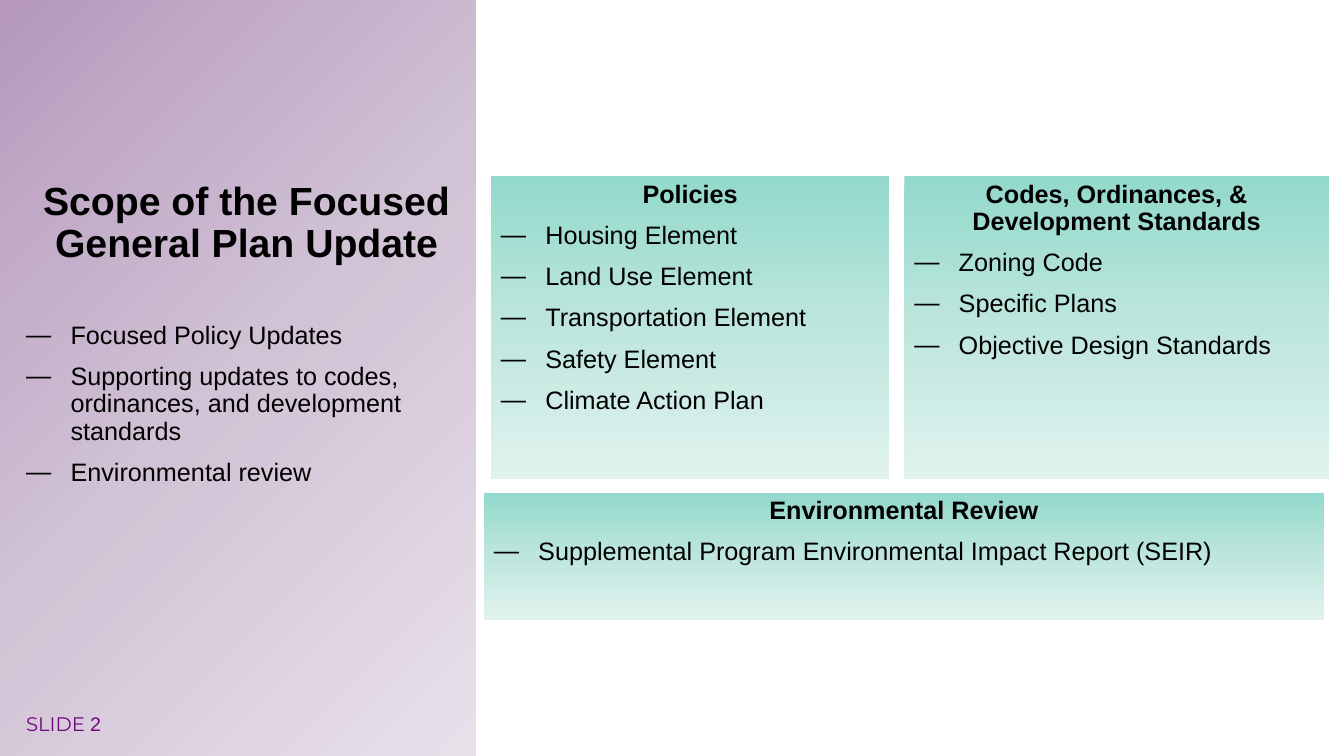
from lxml import etree
from pptx import Presentation
from pptx.dml.color import RGBColor
from pptx.enum.shapes import MSO_SHAPE
from pptx.enum.text import MSO_ANCHOR, MSO_AUTO_SIZE, PP_ALIGN
from pptx.oxml import parse_xml
from pptx.oxml.ns import nsdecls, qn
from pptx.util import Inches, Pt

PURPLE_FADE = ("B699BD", "D1C2D5", "E8E1EA")
GREEN_FADE = ("93D9CB", "BEE6DD", "E0F2EE")


def color(hex_value):
    return RGBColor.from_string(hex_value)


class ScopeSlide:
    """Holds the text style and the slide being built."""

    font = "Arial"
    ink = "000000"
    accent = "6E087A"
    text_size = 18
    indent = Inches(0.44)

    def __init__(self, deck):
        self.slide = deck.slides.add_slide(deck.slide_layouts[1])

    def place(self, shape, left, top, width, height):
        shape.left, shape.top = Inches(left), Inches(top)
        shape.width, shape.height = Inches(width), Inches(height)

    def frame(self, shape):
        frame = shape.text_frame
        frame.word_wrap = True
        frame.auto_size = MSO_AUTO_SIZE.NONE
        frame.vertical_anchor = MSO_ANCHOR.TOP
        return frame

    def run(self, paragraph, text, size=text_size, bold=False, font=font, hex_value=ink):
        run = paragraph.add_run()
        run.text = text
        run.font.name = font
        run.font.size = Pt(size)
        run.font.bold = bold
        run.font.color.rgb = color(hex_value)

    def heading(self, paragraph, text, size=text_size):
        paragraph.alignment = PP_ALIGN.CENTER
        paragraph.line_spacing = 0.9
        paragraph.space_before = Pt(0)
        self.run(paragraph, text, size, bold=True)

    def bullet(self, paragraph, text, first=False):
        properties = paragraph._p.get_or_add_pPr()
        properties.set("marL", str(self.indent))
        properties.set("indent", str(-self.indent))
        etree.SubElement(properties, qn("a:buFont")).set("typeface", self.font)
        etree.SubElement(properties, qn("a:buChar")).set("char", "—")
        paragraph.alignment = PP_ALIGN.LEFT
        paragraph.line_spacing = 0.9
        paragraph.space_before = Pt(0 if first else 10)
        self.run(paragraph, text)

    def title(self, text, *box):
        title = self.slide.shapes.title
        self.place(title, *box)
        self.heading(self.frame(title).paragraphs[0], text, 28)

    def body(self, items, *box):
        body = self.slide.placeholders[1]
        self.place(body, *box)
        frame = self.frame(body)
        for index, item in enumerate(items):
            paragraph = frame.add_paragraph() if index else frame.paragraphs[0]
            self.bullet(paragraph, item, first=index == 0)

    def panel(self, fade, angle, *box):
        panel = self.slide.shapes.add_shape(MSO_SHAPE.RECTANGLE, *map(Inches, box))
        panel.shadow.inherit = False
        panel.line.fill.background()
        stops = "".join(
            f'<a:gs pos="{index * 50000}"><a:srgbClr val="{stop}"/></a:gs>'
            for index, stop in enumerate(fade))
        panel._element.spPr.find(qn("a:prstGeom")).addnext(parse_xml(
            f'<a:gradFill {nsdecls("a")} rotWithShape="1"><a:gsLst>{stops}</a:gsLst>'
            f'<a:lin ang="{angle * 60000}" scaled="0"/></a:gradFill>'))
        return panel

    def sidebar(self, *box):
        panel = self.panel(PURPLE_FADE, 45, *box)
        # Behind the title and body placeholders
        self.slide.shapes._spTree.insert(2, panel._element)

    def card(self, heading, items, *box):
        frame = self.frame(self.panel(GREEN_FADE, 90, *box))
        self.heading(frame.paragraphs[0], heading)
        for item in items:
            self.bullet(frame.add_paragraph(), item)

    def slide_number(self, number, *box):
        label = self.slide.shapes.add_textbox(*map(Inches, box))
        paragraph = self.frame(label).paragraphs[0]
        self.run(paragraph, "SLIDE ", 14, font="Montserrat", hex_value=self.accent)
        self.run(paragraph, number, 14, hex_value=self.accent)


def main():
    deck = Presentation()
    deck.slide_width, deck.slide_height = Inches(13.33), Inches(7.5)
    scope = ScopeSlide(deck)

    # Left side: title and summary
    scope.sidebar(0, -0.01, 4.72, 7.51)
    scope.slide_number("2", 0.16, 7.01, 4.31, 0.34)
    scope.title("Scope of the Focused General Plan Update", 0.17, 1.75, 4.55, 1.4)
    scope.body(["Focused Policy Updates",
                "Supporting updates to codes, ordinances, and development standards",
                "Environmental review"], 0.16, 3.15, 4.41, 4.2)

    # Right side: the three parts of the update
    scope.card("Policies",
               ["Housing Element", "Land Use Element", "Transportation Element",
                "Safety Element", "Climate Action Plan"], 4.87, 1.75, 3.95, 3)
    scope.card("Codes, Ordinances, & Development Standards",
               ["Zoning Code", "Specific Plans", "Objective Design Standards"],
               8.97, 1.75, 4.21, 3)
    scope.card("Environmental Review",
               ["Supplemental Program Environmental Impact Report (SEIR)"],
               4.8, 4.89, 8.33, 1.26)

    deck.save("out.pptx")


if __name__ == "__main__":
    main()
